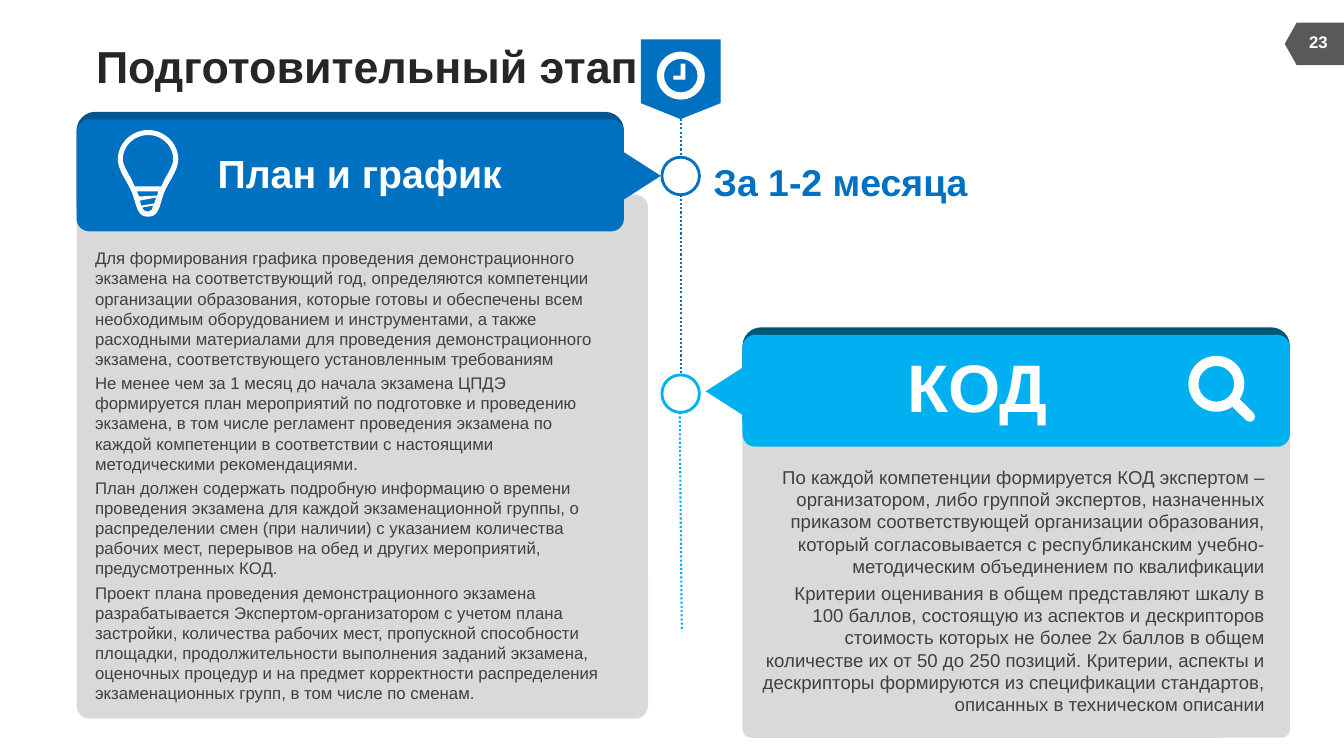
from lxml import etree
from pptx import Presentation
from pptx.dml.color import RGBColor
from pptx.enum.dml import MSO_LINE
from pptx.enum.shapes import MSO_CONNECTOR, MSO_SHAPE as SHAPE
from pptx.enum.text import MSO_ANCHOR as ANCHOR, PP_ALIGN as ALIGN
from pptx.oxml.ns import qn
from pptx.util import Pt

COLORS = {
    "blue": "0070C0", "blue_shade": "005490",
    "cyan": "00B0F0", "cyan_shade": "005878",
    "panel": "D9D9D9", "tag": "595959", "white": "FFFFFF",
    "title": "262626", "body": "404040",
}
CARD_W, CARD_H = 391, 79.9
AXIS = 486.2

PLAN = [
    "Для формирования графика проведения демонстрационного экзамена на соответствующий год, определяются компетенции организации образования, которые готовы и обеспечены всем необходимым оборудованием и инструментами, а также расходными материалами для проведения демонстрационного экзамена, соответствующего установленным требованиям",
    "Не менее чем за 1 месяц до начала экзамена ЦПДЭ формируется план мероприятий по подготовке и проведению экзамена, в том числе регламент проведения экзамена по каждой компетенции в соответствии с настоящими методическими рекомендациями.",
    "План должен содержать подробную информацию о времени проведения экзамена для каждой экзаменационной группы, о распределении смен (при наличии) с указанием количества рабочих мест, перерывов на обед и других мероприятий, предусмотренных КОД.",
    "Проект плана проведения демонстрационного экзамена разрабатывается Экспертом-организатором с учетом плана застройки, количества рабочих мест, пропускной способности площадки, продолжительности выполнения заданий экзамена, оценочных процедур и на предмет корректности распределения экзаменационных групп, в том числе по сменам.",
]
CRITERIA = [
    "По каждой компетенции формируется КОД экспертом – организатором, либо группой экспертов, назначенных приказом соответствующей организации образования, который согласовывается с республиканским учебно-методическим объединением по квалификации",
    "Критерии оценивания в общем представляют шкалу в 100 баллов, состоящую из аспектов и дескрипторов стоимость которых не более 2х баллов в общем количестве их от 50 до 250 позиций. Критерии, аспекты и дескрипторы формируются из спецификации стандартов, описанных в техническом описании",
]


def curve(start, *segments, steps=12):
    """Return points along a chain of cubic Bezier segments."""
    points = [start]
    for c1, c2, end in segments:
        p0 = points[-1]
        for i in range(1, steps + 1):
            t = i / steps
            u = 1 - t
            points.append(tuple(
                u**3 * a + 3 * u * u * t * b + 3 * u * t * t * c + t**3 * d
                for a, b, c, d in zip(p0, c1, c2, end)))
    return points


def mirrored(half, axis):
    """Close a left half outline with its reflection about a vertical axis."""
    return half + [(2 * axis - x, y) for x, y in reversed(half)]


class SlideBuilder:
    def __init__(self, slide, font):
        self.shapes = slide.shapes
        self.font = font

    def color(self, name):
        return RGBColor.from_string(COLORS[name])

    def paint(self, shape, fill, line=None):
        shape.shadow.inherit = False
        shape.fill.solid()
        shape.fill.fore_color.rgb = self.color(fill)
        if line:
            shape.line.color.rgb = self.color(line)
            shape.line.width = Pt(2)
        else:
            shape.line.fill.background()

    def preset(self, kind, box, fill, line=None, adj=None, rotation=0):
        shape = self.shapes.add_shape(kind, *map(Pt, box))
        self.paint(shape, fill, line)
        shape.rotation = rotation
        if adj is not None:
            shape.adjustments[0] = adj

    def outline(self, contours, fill):
        """Draw contours as one shape; inner contours become holes."""
        contours = [[(Pt(x), Pt(y)) for x, y in contour] for contour in contours]
        builder = self.shapes.build_freeform(*contours[0][0])
        for i, (first, *rest) in enumerate(contours):
            if i:
                builder.move_to(*first)
            builder.add_line_segments(rest, close=True)
        self.paint(builder.convert_to_shape(), fill)

    def line(self, start, end, color, width=1.5, dash=MSO_LINE.ROUND_DOT, cap="flat"):
        connector = self.shapes.add_connector(
            MSO_CONNECTOR.STRAIGHT, *map(Pt, start + end))
        connector.line.color.rgb = self.color(color)
        for key, value in {"width": Pt(width), "dash_style": dash}.items():
            setattr(connector.line, key, value)
        properties = connector._element.spPr
        properties.find(qn("a:ln")).set("cap", cap)
        etree.SubElement(properties, qn("a:effectLst"))

    def text(self, box, paragraphs, size, color, bold=False, align=ALIGN.LEFT,
             anchor=ANCHOR.MIDDLE, wrap=False, gap=0):
        frame = self.shapes.add_textbox(*map(Pt, box)).text_frame
        layout = {"word_wrap": wrap, "vertical_anchor": anchor, "margin_left": 0,
                  "margin_right": 0, "margin_top": 0, "margin_bottom": 0}
        for key, value in layout.items():
            setattr(frame, key, value)
        style = {"name": self.font, "size": Pt(size), "bold": bold}
        for i, words in enumerate(paragraphs):
            paragraph = frame.add_paragraph() if i else frame.paragraphs[0]
            paragraph.alignment = align
            paragraph.space_before = Pt(gap)
            run = paragraph.add_run()
            run.text = words
            for key, value in style.items():
                setattr(run.font, key, value)
            run.font.color.rgb = self.color(color)

    def card(self, left, top, panel, color, points_right):
        """Grey panel under a coloured header whose arrow faces the timeline."""
        self.preset(SHAPE.ROUNDED_RECTANGLE, panel, "panel", adj=0.025)
        self.preset(SHAPE.ROUNDED_RECTANGLE, (left, top, CARD_W, CARD_H), color + "_shade")
        self.preset(SHAPE.ROUNDED_RECTANGLE, (left, top + 5.4, CARD_W, CARD_H), color, adj=0.113)
        tip_center = left + CARD_W + 7.2 if points_right else left - 7.2
        self.preset(SHAPE.ISOSCELES_TRIANGLE, (tip_center - 24.5, top + 26.6, 49, 38.2),
                    color, rotation=90 if points_right else 270)

    def marker(self, top, color):
        self.preset(SHAPE.OVAL, (AXIS - 13.4, top, 26.8, 26.8), "white", color)

    def bulb(self):
        axis = 105.8
        glass = curve((axis, 92.9),
                      ((94.3, 92.9), (84.2, 102.2), (84.2, 113.8)),
                      ((84.2, 121.7), (91.4, 130.3), (94.3, 137.5)),
                      ((97.9, 147.6), (97.9, 154.8), (axis, 154.8)))
        hollow = curve((axis, 96.5),
                       ((95.8, 96.5), (87.8, 104.4), (87.8, 113.8)),
                       ((87.8, 117.4), (90.7, 122.4), (93.6, 127.4)),
                       ((94.6, 129), (95.3, 132), (96.5, 133.2)))
        base_gaps = [
            [(99.4, 140.4), (97.9, 136.8), (113, 136.8), (112.3, 139.7)],
            [(100.8, 146.9), (100.1, 143.3), (111.6, 141.1), (110.2, 145.4)],
            [(101.5, 148.3), (109.4, 146.9), (108.4, 150), (105.8, 151.2), (103, 150.4)],
        ]
        self.outline([mirrored(glass, axis), mirrored(hollow, axis), *base_gaps], "white")

    def magnifier(self):
        self.preset(SHAPE.DONUT, (848.9, 254.2, 39.9, 39.9), "white", adj=0.18)
        self.line((883, 288), (892.8, 297.6), "white", 7.5, MSO_LINE.SOLID, "rnd")

    def clock(self):
        self.preset(SHAPE.DONUT, (469.2, 36.9, 34.2, 34.2), "white", adj=0.15)
        self.outline([[(486.2, 45.4), (489.6, 45.4), (489.6, 56.9),
                       (481, 56.9), (481, 54), (486.2, 54)]], "white")


def main():
    deck = Presentation()
    deck.slide_width, deck.slide_height = Pt(960), Pt(540)
    page = SlideBuilder(deck.slides.add_slide(deck.slide_layouts[6]), "Arial")

    page.preset(SHAPE.FLOWCHART_OFFPAGE_CONNECTOR, (923.8, 10.1, 30.2, 42.5), "tag", rotation=90)
    page.text((921.6, 15.8, 40.3, 28.8), ["23"], 12, "white", True, ALIGN.CENTER, wrap=True)
    page.text((68.6, 28.1, 591.8, 37.4), ["Подготовительный этап"], 32, "title", True)

    page.line((AXIS, 85), (AXIS, 112.3), "blue")
    page.line((AXIS, 139), (AXIS, 267.8), "blue")
    page.line((485.5, 294.5), (487, 449.3), "cyan")

    page.card(54.7, 79.9, (54.7, 139, 408.2, 374.4), "blue", True)
    page.bulb()
    page.text((155.5, 106.6, 205.2, 33.8), ["План и график"], 28, "white", True)
    page.text((67.9, 177.1, 361.4, 328.3), PLAN, 12, "body",
              anchor=ANCHOR.TOP, wrap=True, gap=2.8)

    page.card(530.4, 233.8, (530.4, 293, CARD_W, 234), "cyan", False)
    page.magnifier()
    page.text((646.6, 246.2, 101.5, 58.3), ["КОД"], 48, "white", True, ALIGN.RIGHT)
    page.text((542.2, 332.6, 361.4, 180.7), CRITERIA, 13.3, "body",
              align=ALIGN.RIGHT, anchor=ANCHOR.TOP, wrap=True, gap=3)

    page.text((509.8, 113.8, 182.9, 32.4), ["За 1-2 месяца"], 26.7, "blue", True)
    page.marker(112.3, "blue")
    page.marker(267.8, "cyan")
    page.preset(SHAPE.FLOWCHART_OFFPAGE_CONNECTOR, (457.7, 28.1, 57, 57), "blue")
    page.clock()
    deck.save("out.pptx")


if __name__ == "__main__":
    main()
